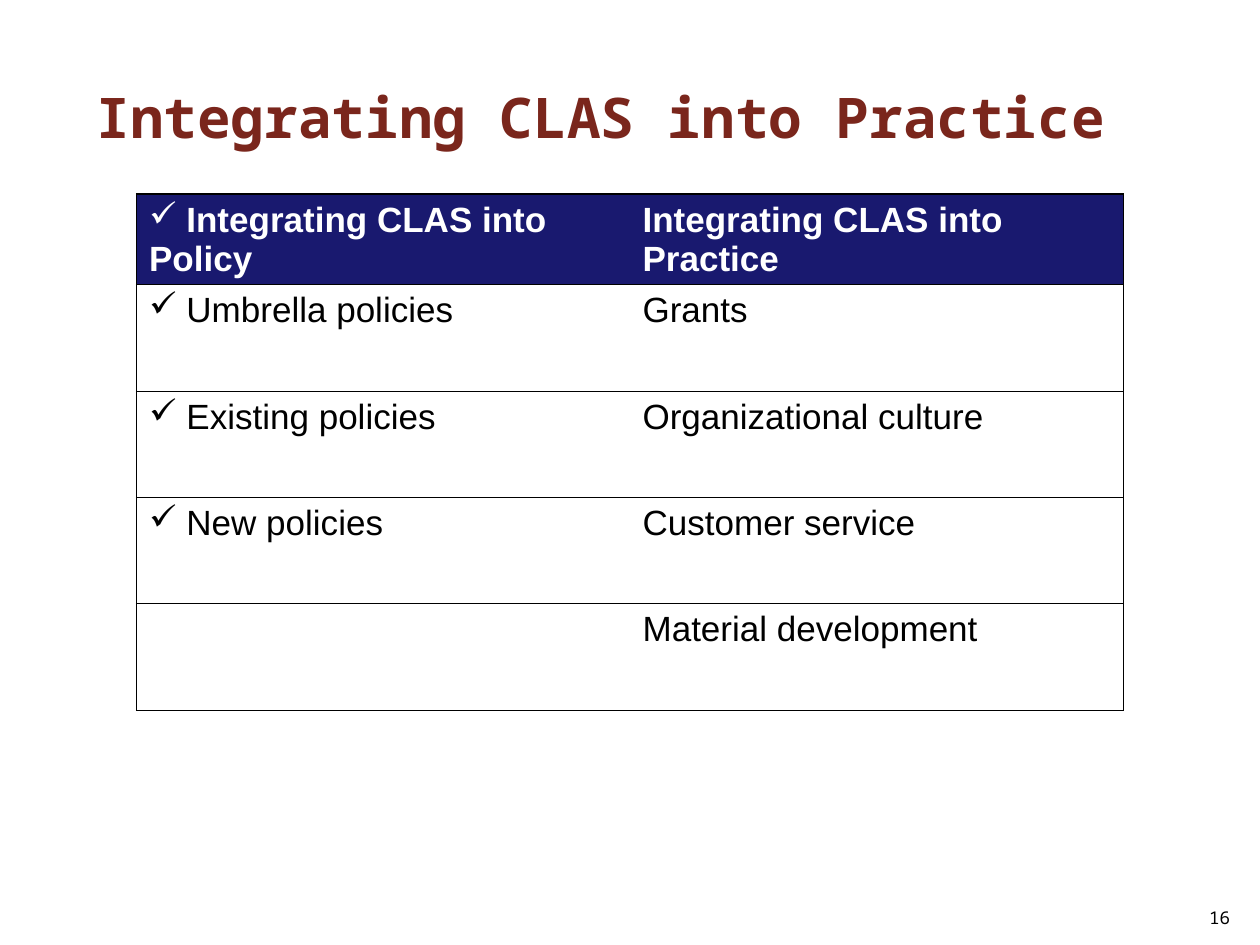
from lxml import etree
from pptx import Presentation
from pptx import util as u
from pptx.dml.color import RGBColor
from pptx.enum import text
from pptx.oxml import ns

TITLE = "Integrating CLAS into Practice"
PAGE_NUMBER = "16"
CHECK = "✓"
ROWS = [
    (" Integrating CLAS into Policy", "Integrating CLAS into Practice"),
    (" Umbrella policies", "Grants"),
    (" Existing policies", "Organizational culture"),
    (" New policies", "Customer service"),
    ("", "Material development"),
]
THEME = {
    "title": {"name": "Noto Sans Mono", "size": 32, "color": "7A261C", "bold": True},
    "number": {"name": "Noto Sans Mono", "size": 10, "color": "000000", "bold": False},
    "header": {"name": "Arial", "size": 20, "color": "FFFFFF", "bold": True},
    "body": {"name": "Arial", "size": 20, "color": "000000", "bold": False},
    "header_fill": "19196F",
    "border": "000000",
    "border_width": 0.75,
    "table_style": "{2D5ABB26-0587-4C30-8999-92F81FD0307C}",
}
TITLE_BOX = (48, 21.6, 636, 90)
NUMBER_BOX = (681, 505, 29, 29)
TABLE_LEFT, TABLE_TOP, TABLE_WIDTH = 78, 110.9, 564
HEADER_HEIGHT, ROW_HEIGHT = 42, 60.8


def points(values):
    return [u.Pt(value) for value in values]


def format_font(font, style):
    for name, value in style.items():
        if name == "color":
            font.color.rgb = RGBColor.from_string(value)
        else:
            setattr(font, name, u.Pt(value) if name == "size" else value)


def write_text(frame, content, style, alignment, anchor, bullet=None):
    frame.word_wrap = True
    frame.vertical_anchor = anchor
    paragraph = frame.paragraphs[0]
    paragraph.alignment = alignment
    if content:
        paragraph.add_run().text = content
    if bullet:
        properties = paragraph._p.get_or_add_pPr()
        properties.set("marL", "0")
        properties.set("indent", "0")
        etree.SubElement(properties, ns.qn("a:buChar")).set("char", bullet)
    format_font(paragraph.font, style)
    for run in paragraph.runs:
        format_font(run.font, style)


def draw_borders(cell, sides):
    properties = cell._tc.get_or_add_tcPr()
    for position, side in enumerate(side for side in "LRTB" if side in sides):
        line = etree.Element(ns.qn(f"a:ln{side}"), w=str(u.Pt(THEME["border_width"])))
        fill = etree.SubElement(line, ns.qn("a:solidFill"))
        etree.SubElement(fill, ns.qn("a:srgbClr")).set("val", THEME["border"])
        properties.insert(position, line)


def add_title(slide):
    title = slide.shapes.title
    title.left, title.top, title.width, title.height = points(TITLE_BOX)
    write_text(title.text_frame, TITLE, THEME["title"],
               text.PP_ALIGN.LEFT, text.MSO_ANCHOR.MIDDLE)


def add_page_number(slide):
    box = slide.shapes.add_textbox(*points(NUMBER_BOX))
    write_text(box.text_frame, PAGE_NUMBER, THEME["number"],
               text.PP_ALIGN.RIGHT, text.MSO_ANCHOR.BOTTOM)


def add_practice_table(slide):
    heights = [HEADER_HEIGHT] + [ROW_HEIGHT] * (len(ROWS) - 1)
    frame = slide.shapes.add_table(
        len(ROWS), len(ROWS[0]),
        *points((TABLE_LEFT, TABLE_TOP, TABLE_WIDTH, sum(heights))))
    table = frame.table
    table.horz_banding = False
    table._tbl.tblPr.find(ns.qn("a:tableStyleId")).text = THEME["table_style"]
    for row, height in zip(table.rows, heights):
        row.height = u.Pt(height)
    for row_index, row in enumerate(ROWS):
        is_header = row_index == 0
        for column_index, content in enumerate(row):
            cell = table.cell(row_index, column_index)
            is_checked = column_index == 0 and content
            write_text(cell.text_frame, content,
                       THEME["header" if is_header else "body"],
                       text.PP_ALIGN.LEFT, text.MSO_ANCHOR.TOP,
                       CHECK if is_checked else None)
            if is_header:
                cell.fill.solid()
                cell.fill.fore_color.rgb = RGBColor.from_string(THEME["header_fill"])
            else:
                cell.fill.background()
            draw_borders(cell, "TB" + "LR"[column_index])


def main():
    presentation = Presentation()
    presentation.slide_width, presentation.slide_height = points((720, 540))
    slide = presentation.slides.add_slide(presentation.slide_layouts[5])
    add_title(slide)
    add_practice_table(slide)
    add_page_number(slide)
    presentation.save("out.pptx")


if __name__ == "__main__":
    main()
